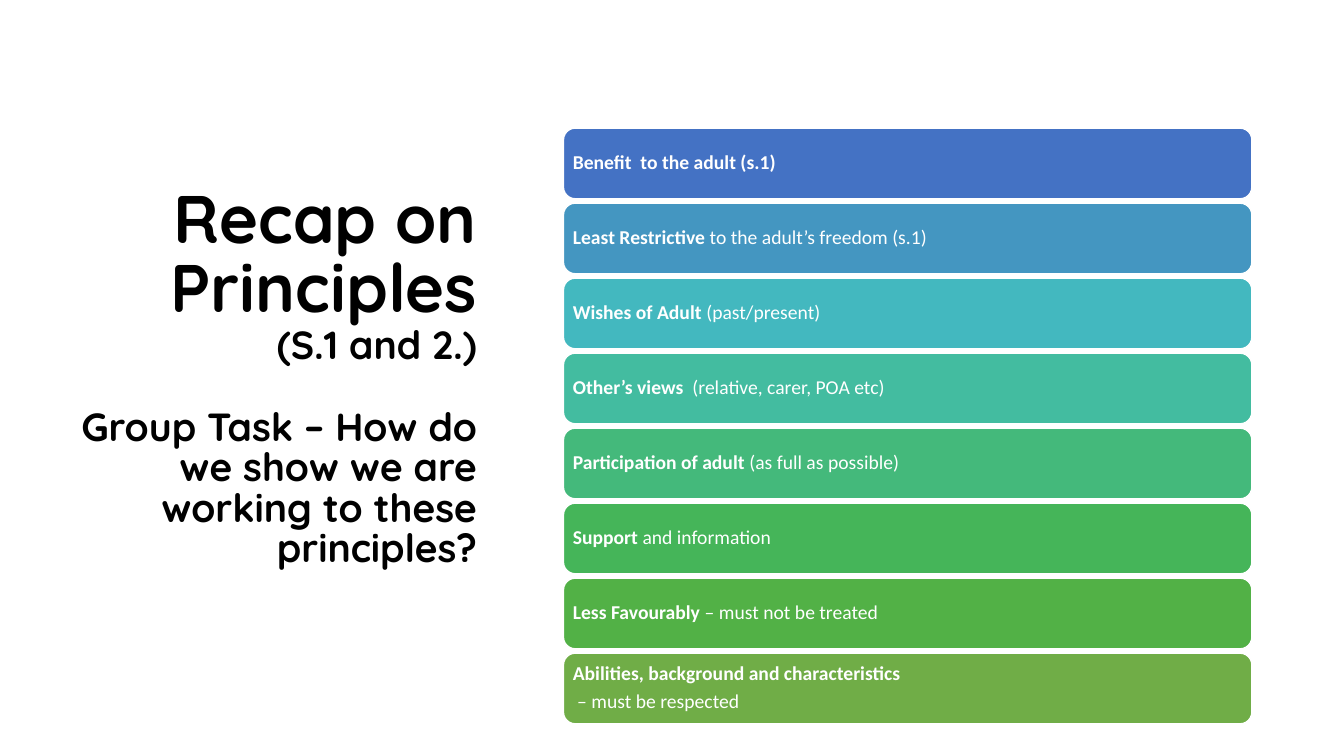
"""Build the slide that recaps the principles of working with adults."""
from pptx import Presentation
from pptx.dml.color import RGBColor
from pptx.enum.shapes import MSO_SHAPE as Shape
from pptx.enum.text import MSO_ANCHOR as Anchor, PP_ALIGN as Align
from pptx.util import Cm, Pt

COLOURS = {
    "text": "000000",
    "white": "FFFFFF",
    "benefit": "4472C4",
    "restrictive": "4496C1",
    "wishes": "43B8BF",
    "views": "43BCA0",
    "participation": "44B97B",
    "support": "45B559",
    "favourably": "52B146",
    "abilities": "70AD47",
}


def add_run(paragraph, text, font, size, colour, bold):
    run = paragraph.add_run()
    run.text = text
    run.font.name = font
    run.font.size = Pt(size)
    run.font.bold = bold
    run.font.color.rgb = RGBColor.from_string(COLOURS[colour])


presentation = Presentation()
presentation.slide_width = Cm(33.87)
presentation.slide_height = Cm(19.05)
slide = presentation.slides.add_slide(presentation.slide_layouts[6])

title = slide.shapes.add_textbox(Cm(1.32), Cm(2.97), Cm(10.95), Cm(15.52))
title_frame = title.text_frame
title_frame.word_wrap = True
title_frame.vertical_anchor = Anchor.MIDDLE
title_frame.margin_bottom = Cm(2.46)
title_lines = [
    ("Recap on Principles", 48, 0),
    ("(S.1 and 2.)", 28, 0),
    ("Group Task – How do we show we are working to these principles?", 28, 30),
]
for index, (text, size, gap) in enumerate(title_lines):
    paragraph = title_frame.add_paragraph() if index else title_frame.paragraphs[0]
    paragraph.alignment = Align.RIGHT
    paragraph.line_spacing = 0.86
    paragraph.space_before = Pt(gap)
    add_run(paragraph, text, "Quicksand", size, "text", True)

principles = [
    ("benefit", [[("Benefit  to the adult (s.1)", True)]]),
    ("restrictive", [[("Least Restrictive", True), (" to the adult’s freedom (s.1)", False)]]),
    ("wishes", [[("Wishes of Adult ", True), ("(past/present)", False)]]),
    ("views", [[("Other’s views  ", True), ("(relative, carer, POA etc)", False)]]),
    ("participation", [[("Participation of adult ", True), ("(as full as possible)", False)]]),
    ("support", [[("Support ", True), ("and information", False)]]),
    ("favourably", [[("Less Favourably ", True), ("– must not be treated", False)]]),
    ("abilities", [
        [("Abilities, background and characteristics", True)],
        [(" ", True), ("– must be respected", False)],
    ]),
]
bar_top, bar_pitch = 3.23, 1.89
for row, (colour, paragraphs) in enumerate(principles):
    bar = slide.shapes.add_shape(
        Shape.ROUNDED_RECTANGLE, Cm(14.2), Cm(bar_top + row * bar_pitch), Cm(17.35), Cm(1.78)
    )
    bar.shadow.inherit = False
    bar.fill.solid()
    bar.fill.fore_color.rgb = RGBColor.from_string(COLOURS[colour])
    bar.line.color.rgb = RGBColor.from_string(COLOURS["white"])
    bar.line.width = Pt(1)
    frame = bar.text_frame
    frame.word_wrap = True
    frame.vertical_anchor = Anchor.MIDDLE
    frame.margin_left = frame.margin_right = Cm(0.15)
    frame.margin_top = frame.margin_bottom = Cm(0.15)
    for index, runs in enumerate(paragraphs):
        paragraph = frame.add_paragraph() if index else frame.paragraphs[0]
        paragraph.alignment = Align.LEFT
        paragraph.line_spacing = 0.9
        paragraph.space_after = Pt(4.9)
        for text, bold in runs:
            add_run(paragraph, text, "Calibri", 14, "white", bold)

presentation.save("out.pptx")
